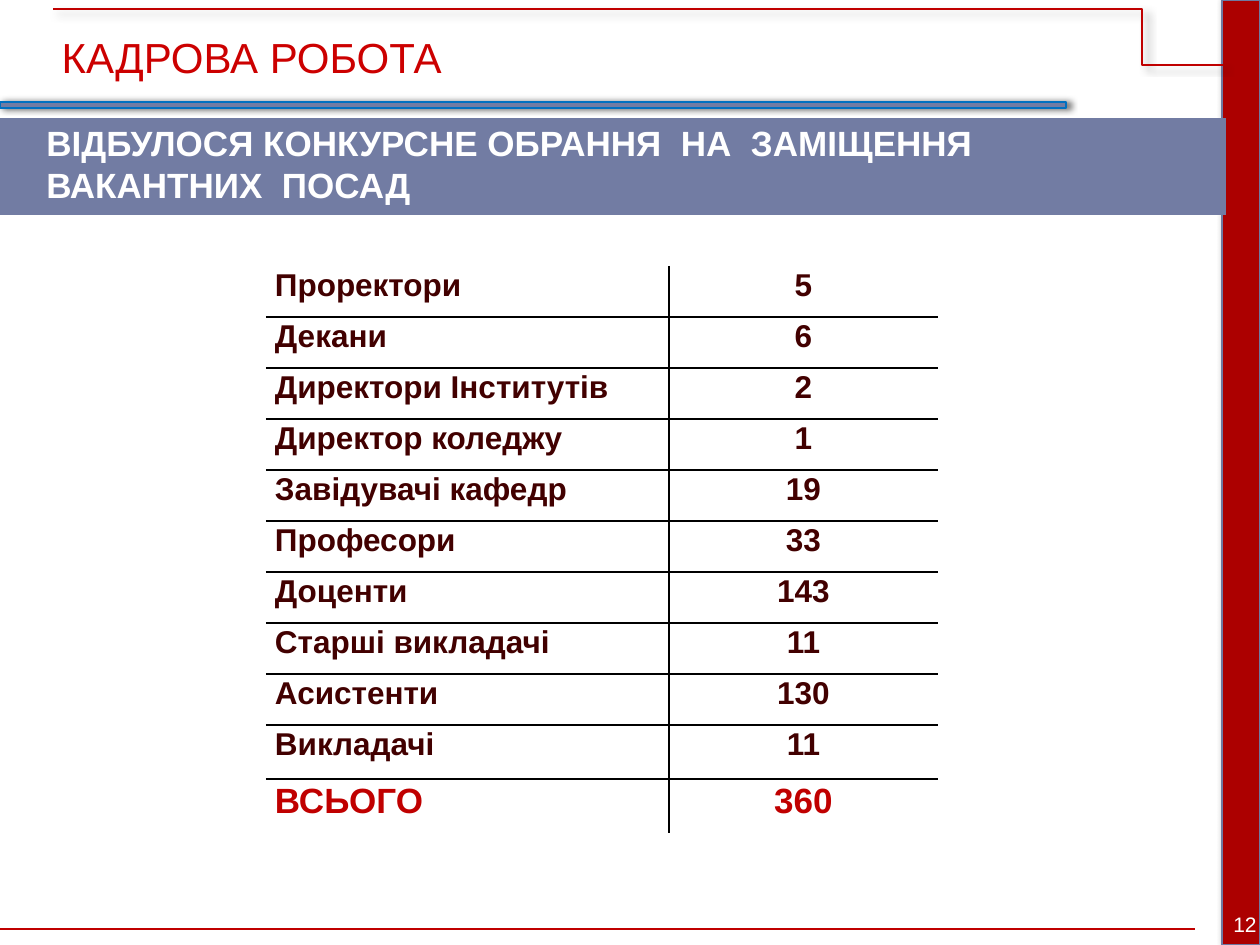
from dataclasses import dataclass

from lxml.etree import SubElement
from pptx import Presentation
from pptx.dml.color import RGBColor
from pptx.enum.shapes import MSO_CONNECTOR, MSO_SHAPE
from pptx.enum.text import MSO_ANCHOR, PP_ALIGN
from pptx.oxml.ns import qn
from pptx.util import Pt

PX = 914400 / 126


@dataclass(frozen=True)
class Theme:
    font: str = "Arial"
    red_band: str = "AC0000"
    band_edge: str = "6E79A1"
    slate: str = "727CA3"
    blue: str = "0070C0"
    red: str = "C00000"
    title: str = "CC0000"
    table_text: str = "420000"
    white: str = "FFFFFF"
    black: str = "000000"
    title_size: int = 24
    heading_size: int = 20
    table_size: int = 18
    number_size: int = 12


THEME = Theme()

ELECTED = [
    ("Проректори", "5"),
    ("Декани", "6"),
    ("Директори Інститутів", "2"),
    ("Директор коледжу", "1"),
    ("Завідувачі кафедр", "19"),
    ("Професори", "33"),
    ("Доценти", "143"),
    ("Старші викладачі", "11"),
    ("Асистенти", "130"),
    ("Викладачі", "11"),
    ("ВСЬОГО", "360"),
]


def px(*lengths):
    return [round(length * PX) for length in lengths]


def set_attributes(target, **values):
    for name, value in values.items():
        setattr(target, name, value)


def write(frame, text, size, color, bold=False, **paragraph_format):
    frame.word_wrap = True
    paragraph = frame.paragraphs[0]
    set_attributes(paragraph, **paragraph_format)
    run = paragraph.add_run()
    run.text = text
    set_attributes(run.font, name=THEME.font, size=Pt(size), bold=bold)
    run.font.color.rgb = RGBColor.from_string(color)


def set_effects(shape, alpha=None, distance=0, degrees=0):
    """Give the shape an outer shadow, or none when alpha is missing."""
    properties = shape._element.spPr
    for old in properties.findall(qn("a:effectLst")):
        properties.remove(old)
    effects = SubElement(properties, qn("a:effectLst"))
    if alpha is None:
        return
    shadow = SubElement(effects, qn("a:outerShdw"), blurRad=str(Pt(4)),
                        dist=str(Pt(distance)), dir=str(degrees * 60000),
                        algn="tl", rotWithShape="0")
    color = SubElement(shadow, qn("a:srgbClr"), val=THEME.black)
    SubElement(color, qn("a:alpha"), val=str(alpha * 1000))


def set_line(shape, color):
    shape.line.color.rgb = RGBColor.from_string(color)
    shape.line.width = Pt(1)


def add_bar(slide, box, fill, line=None, **shadow):
    bar = slide.shapes.add_shape(MSO_SHAPE.RECTANGLE, *px(*box))
    bar.fill.solid()
    bar.fill.fore_color.rgb = RGBColor.from_string(fill)
    if line:
        set_line(bar, line)
    else:
        bar.line.fill.background()
    set_effects(bar, **shadow)


def add_rule(slide, kind, ends, **shadow):
    rule = slide.shapes.add_connector(kind, *px(*ends))
    set_line(rule, THEME.red)
    set_effects(rule, **shadow)
    return rule


def add_stepped_rule(slide):
    rule = add_rule(slide, MSO_CONNECTOR.ELBOW, (53, 9, 1223, 65),
                    alpha=40, distance=3, degrees=45)
    properties = rule._element.spPr
    properties.find(qn("a:xfrm")).set("rot", str(180 * 60000))
    geometry = properties.find(qn("a:prstGeom"))
    adjustments = geometry.find(qn("a:avLst"))
    if adjustments is None:
        adjustments = SubElement(geometry, qn("a:avLst"))
    SubElement(adjustments, qn("a:gd"), name="adj1", fmla="val 6900")


def add_slide_number(slide, number):
    shape = slide.shapes.add_shape(MSO_SHAPE.DOUBLE_BRACKET, *px(1207, 897, 76, 54))
    shape.adjustments[0] = 0.18
    shape.fill.background()
    shape.line.fill.background()
    set_effects(shape)
    frame = shape.text_frame
    set_attributes(frame, vertical_anchor=MSO_ANCHOR.MIDDLE, margin_left=0,
                   margin_right=0, margin_top=0, margin_bottom=0)
    write(frame, number, THEME.number_size, THEME.white, alignment=PP_ALIGN.CENTER)


def place_title(slide, text):
    title = slide.shapes.title
    left, top, width, height = px(49, 25, 1033, 63)
    set_attributes(title, left=left, top=top, width=width, height=height)
    title.text_frame.vertical_anchor = MSO_ANCHOR.TOP
    write(title.text_frame, text, THEME.title_size, THEME.title,
          alignment=PP_ALIGN.LEFT)


def add_heading(slide, text):
    box = slide.shapes.add_textbox(*px(34, 115, 1160, 97))
    write(box.text_frame, text, THEME.heading_size, THEME.white, bold=True)


def set_borders(cell, visible):
    """Draw the named sides (L, R, T, B) in black and hide the others."""
    properties = cell._tc.get_or_add_tcPr()
    for side in "LRTB":
        border = SubElement(properties, qn(f"a:ln{side}"), w=str(Pt(1)))
        if side in visible:
            fill = SubElement(border, qn("a:solidFill"))
            SubElement(fill, qn("a:srgbClr"), val=THEME.black)
        else:
            SubElement(border, qn("a:noFill"))


def add_elected_table(slide):
    last = len(ELECTED) - 1
    heights = px(*[51] * (last - 1), 54, 54)
    table = slide.shapes.add_table(len(ELECTED), 2, *px(266, 266, 672, 567)).table
    set_attributes(table, first_row=False, horz_banding=False)
    for column, width in zip(table.columns, px(403, 269)):
        column.width = width
    side_margin = px(9)[0]
    for index, values in enumerate(ELECTED):
        table.rows[index].height = heights[index]
        total = index == last
        size = THEME.heading_size if total else THEME.table_size
        color = THEME.red if total else THEME.table_text
        inner_rows = ("T" if index else "") + ("" if total else "B")
        for cell, value, inner_side, alignment in zip(
                table.rows[index].cells, values, "RL",
                (PP_ALIGN.LEFT, PP_ALIGN.CENTER)):
            set_attributes(cell, margin_left=side_margin, margin_right=side_margin,
                           margin_top=0, margin_bottom=0)
            set_borders(cell, inner_side + inner_rows)
            cell.fill.background()
            write(cell.text_frame, value, size, color, bold=True,
                  alignment=alignment, line_spacing=1.07)


def main():
    presentation = Presentation()
    width, height = px(1260, 945)
    set_attributes(presentation, slide_width=width, slide_height=height)
    slide = presentation.slides.add_slide(presentation.slide_layouts[5])
    add_bar(slide, (1222, 0, 38, 945), THEME.red_band, THEME.band_edge,
            alpha=60, distance=2)
    add_bar(slide, (0, 102, 1066, 6), THEME.slate, THEME.blue, alpha=60, distance=2)
    add_stepped_rule(slide)
    add_rule(slide, MSO_CONNECTOR.STRAIGHT, (0, 929, 1195, 929))
    add_slide_number(slide, "12")
    add_bar(slide, (0, 118, 1226, 97), THEME.slate)
    place_title(slide, "КАДРОВА РОБОТА")
    add_heading(slide, "ВІДБУЛОСЯ КОНКУРСНЕ ОБРАННЯ  НА  ЗАМІЩЕННЯ  ВАКАНТНИХ  ПОСАД")
    add_elected_table(slide)
    presentation.save("out.pptx")


if __name__ == "__main__":
    main()
